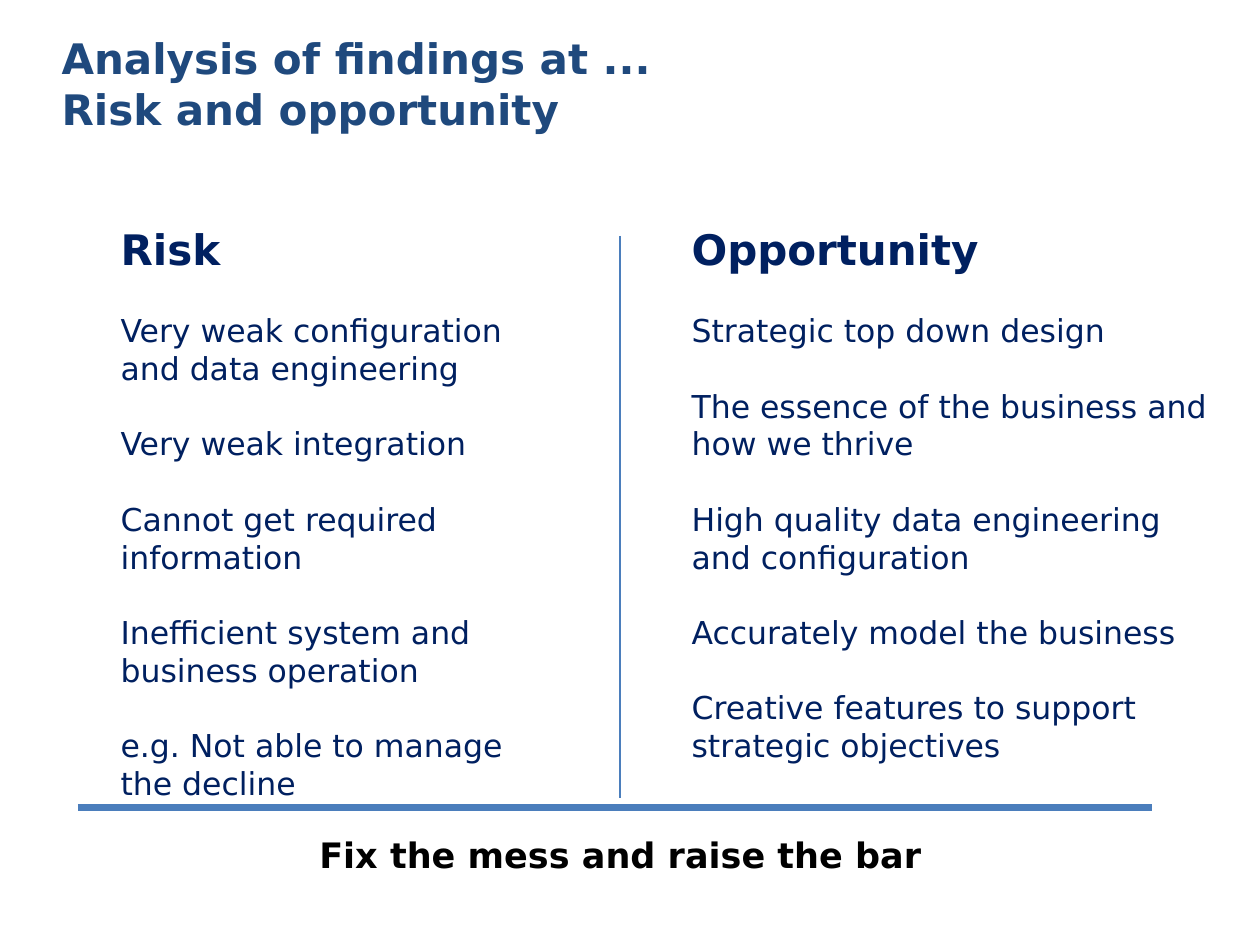
from dataclasses import dataclass

from lxml import etree
from pptx import Presentation
from pptx.dml.color import RGBColor
from pptx.enum.shapes import MSO_CONNECTOR
from pptx.enum.text import MSO_ANCHOR, MSO_AUTO_SIZE, PP_ALIGN
from pptx.oxml.ns import qn
from pptx.util import Inches, Pt

PX = Inches(1) / 126
TWO_CONTENT = 3
STRAIGHT = MSO_CONNECTOR.STRAIGHT
TOP, MIDDLE = MSO_ANCHOR.TOP, MSO_ANCHOR.MIDDLE
NO_AUTOFIT = MSO_AUTO_SIZE.NONE
LEFT, CENTER = PP_ALIGN.LEFT, PP_ALIGN.CENTER


@dataclass(frozen=True)
class Theme:
    font: str = "DejaVu Sans"
    title: RGBColor = RGBColor(0x1F, 0x49, 0x7D)
    body: RGBColor = RGBColor(0x00, 0x20, 0x60)
    message: RGBColor = RGBColor(0x00, 0x00, 0x00)
    rule: RGBColor = RGBColor(0x4B, 0x7E, 0xBC)
    heading_size: int = 24
    message_size: int = 20
    body_size: int = 18
    item_gap: float = 21.5


def px(*lengths):
    return [round(length * PX) for length in lengths]


def write(paragraph, text, *, size, color, font, bold=False, align=LEFT, before=0):
    """Fill a paragraph with one formatted run, without bullet or indent."""
    properties = paragraph._p.get_or_add_pPr()
    properties.set("marL", "0")
    properties.set("indent", "0")
    etree.SubElement(properties, qn("a:buNone"))
    paragraph.alignment = align
    paragraph.space_before = Pt(before)
    paragraph.space_after = Pt(0)
    run = paragraph.add_run()
    run.text = text
    run.font.name = font
    run.font.size = Pt(size)
    run.font.bold = bold
    run.font.color.rgb = color


class SlideBuilder:
    def __init__(self, slide, theme):
        self.slide = slide
        self.theme = theme

    def fill(self, shape, box, lines, anchor=TOP):
        """Place a text shape and write (text, format) lines into it."""
        shape.left, shape.top, shape.width, shape.height = px(*box)
        frame = shape.text_frame
        frame.word_wrap = True
        frame.auto_size = NO_AUTOFIT
        frame.vertical_anchor = anchor
        for number, (text, style) in enumerate(lines):
            paragraph = frame.add_paragraph() if number else frame.paragraphs[0]
            write(paragraph, text, font=self.theme.font, **style)

    def title(self, box, lines):
        style = dict(size=self.theme.heading_size, color=self.theme.title, bold=True)
        self.fill(self.slide.shapes.title, box, [(line, style) for line in lines], MIDDLE)

    def column(self, index, box, heading, items):
        theme = self.theme
        heading_style = dict(size=theme.heading_size, color=theme.body, bold=True)
        item_style = dict(size=theme.body_size, color=theme.body, before=theme.item_gap)
        lines = [(heading, heading_style)] + [(item, item_style) for item in items]
        self.fill(self.slide.placeholders[index], box, lines)

    def message(self, box, text):
        style = dict(size=self.theme.message_size, color=self.theme.message,
                     bold=True, align=CENTER)
        self.fill(self.slide.shapes.add_textbox(*px(*box)), box, [(text, style)])

    def rule(self, start, end, weight):
        connector = self.slide.shapes.add_connector(STRAIGHT, *px(*start, *end))
        connector.line.color.rgb = self.theme.rule
        connector.line.width = Pt(weight)
        etree.SubElement(connector._element.spPr, qn("a:effectLst"))


def main():
    presentation = Presentation()
    presentation.slide_width, presentation.slide_height = Inches(10), Inches(7.5)
    slide = presentation.slides.add_slide(presentation.slide_layouts[TWO_CONTENT])
    builder = SlideBuilder(slide, Theme())

    builder.title((49, 29, 886, 108),
                  ["Analysis of findings at ...", "Risk and opportunity"])
    builder.rule((78, 808), (1152, 808), 4)
    builder.rule((620, 236), (620, 798), 0.75)
    builder.column(1, (108, 217, 444, 674), "Risk", [
        "Very weak configuration and data engineering",
        "Very weak integration",
        "Cannot get required information",
        "Inefficient system and business operation",
        "e.g. Not able to manage the decline",
    ])
    builder.column(2, (679, 217, 542, 559), "Opportunity", [
        "Strategic top down design",
        "The essence of the business and how we thrive",
        "High quality data engineering and configuration",
        "Accurately model the business",
        "Creative features to support strategic objectives",
    ])
    builder.message((207, 827, 827, 55), "Fix the mess and raise the bar")

    presentation.save("out.pptx")


if __name__ == "__main__":
    main()
